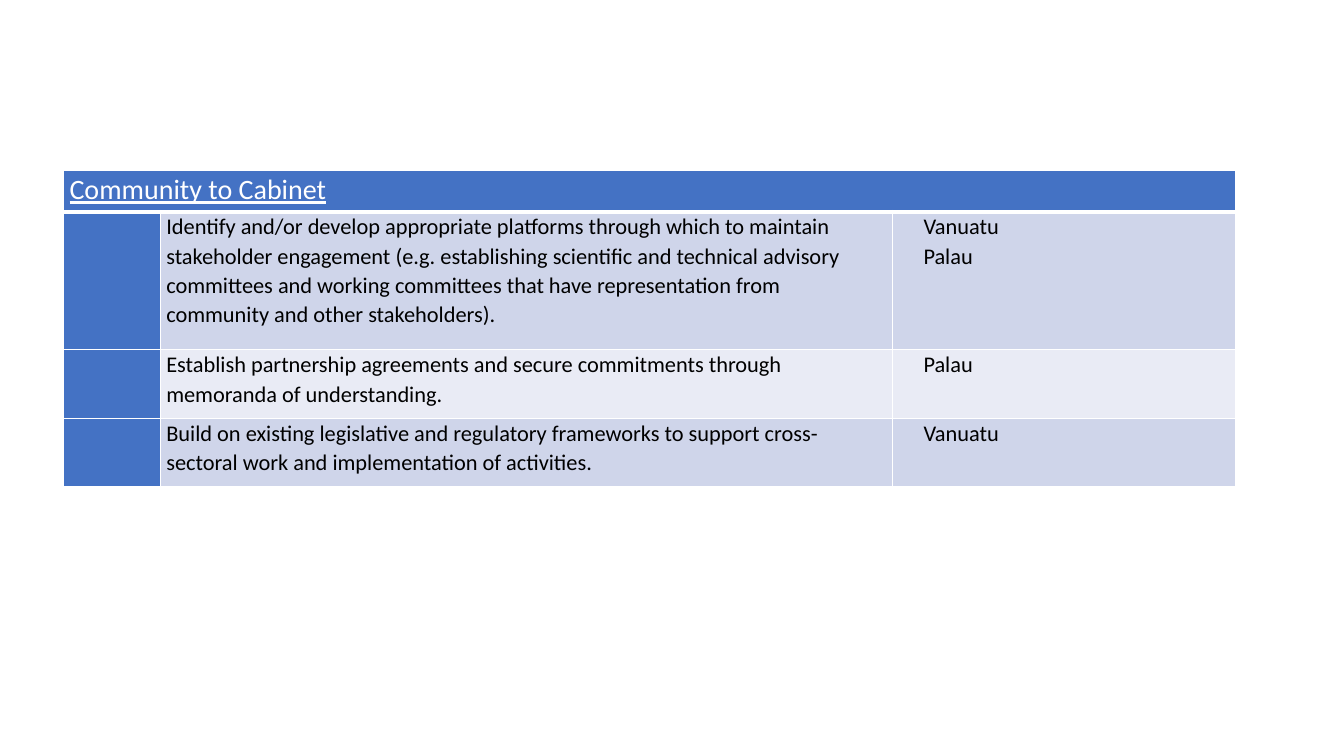
import pptx
import pptx.dml.color
import pptx.oxml.ns
import pptx.util
import lxml.etree

PX = 9144  # EMU per px, 100 px to the inch
COLORS = {"header": "4472C4", "band": "CFD5EA", "light": "E9EBF5",
          "white": "FFFFFF", "black": "000000"}
HEADER_FONT = {"name": "Calibri", "size": pptx.util.Pt(20), "underline": True}
BODY_FONT = {"name": "Calibri", "size": pptx.util.Pt(16), "underline": False}
MARGINS = {"margin_left": 6 * PX, "margin_right": 6 * PX,
           "margin_top": 0, "margin_bottom": 0}
TABLE_FLAGS = {"first_row": True, "first_col": True, "horz_banding": True}

COLUMN_WIDTHS = [96, 726, 341]
ROW_HEIGHTS = [41, 137, 68, 68]
COUNTRY_INDENT = 25
TITLE = "Community to Cabinet"
ACTIONS = [
    ("Identify and/or develop appropriate platforms through which to maintain "
     "stakeholder engagement (e.g. establishing scientific and technical advisory "
     "committees and working committees that have representation from community "
     "and other stakeholders).", ["Vanuatu", "Palau"]),
    ("Establish partnership agreements and secure commitments through memoranda "
     "of understanding.", ["Palau"]),
    ("Build on existing legislative and regulatory frameworks to support "
     "cross-sectoral work and implementation of activities.", ["Vanuatu"]),
]


def rgb(name):
    return pptx.dml.color.RGBColor.from_string(COLORS[name])


def set_attributes(target, values):
    for name, value in values.items():
        setattr(target, name, value)


def set_borders(cell, bottom_points=1):
    qn = pptx.oxml.ns.qn
    properties = cell._tc.get_or_add_tcPr()
    for side, points in (("L", 1), ("R", 1), ("T", 1), ("B", bottom_points)):
        line = lxml.etree.SubElement(properties, qn(f"a:ln{side}"),
                                     w=str(pptx.util.Pt(points)))
        fill = lxml.etree.SubElement(line, qn("a:solidFill"))
        lxml.etree.SubElement(fill, qn("a:srgbClr"), val=COLORS["white"])


def format_cell(cell, fill, bottom_points=1):
    set_borders(cell, bottom_points)
    cell.fill.solid()
    cell.fill.fore_color.rgb = rgb(fill)
    set_attributes(cell, MARGINS)


def write_cell(cell, lines, font, color, indent=0):
    cell.text = "\n".join(lines)
    for paragraph in cell.text_frame.paragraphs:
        paragraph.line_spacing = 1.07
        if indent:
            paragraph._p.get_or_add_pPr().set("marL", str(indent * PX))
        for run in paragraph.runs:
            set_attributes(run.font, font)
            run.font.color.rgb = rgb(color)


def add_action_table(slide, left, top):
    box = [left, top, sum(COLUMN_WIDTHS), sum(ROW_HEIGHTS)]
    table = slide.shapes.add_table(len(ROW_HEIGHTS), len(COLUMN_WIDTHS),
                                   *(length * PX for length in box)).table
    set_attributes(table, TABLE_FLAGS)
    for column, width in zip(table.columns, COLUMN_WIDTHS):
        column.width = width * PX
    for row, height in zip(table.rows, ROW_HEIGHTS):
        row.height = height * PX

    # Header across all columns
    for cell in table.rows[0].cells:
        format_cell(cell, "header", bottom_points=3)
    table.cell(0, 0).merge(table.cell(0, len(COLUMN_WIDTHS) - 1))
    write_cell(table.cell(0, 0), [TITLE], HEADER_FONT, "white")

    # Banded rows of actions and countries
    for index, (action, countries) in enumerate(ACTIONS):
        band = "light" if index % 2 else "band"
        marker_cell, action_cell, country_cell = table.rows[index + 1].cells
        format_cell(marker_cell, "header")
        format_cell(action_cell, band)
        format_cell(country_cell, band)
        write_cell(action_cell, [action], BODY_FONT, "black")
        write_cell(country_cell, countries, BODY_FONT, "black", COUNTRY_INDENT)


def main():
    presentation = pptx.Presentation()
    presentation.slide_width = 1333 * PX
    presentation.slide_height = 750 * PX
    slide = presentation.slides.add_slide(presentation.slide_layouts[6])
    add_action_table(slide, 63, 169)
    presentation.save("out.pptx")


if __name__ == "__main__":
    main()
